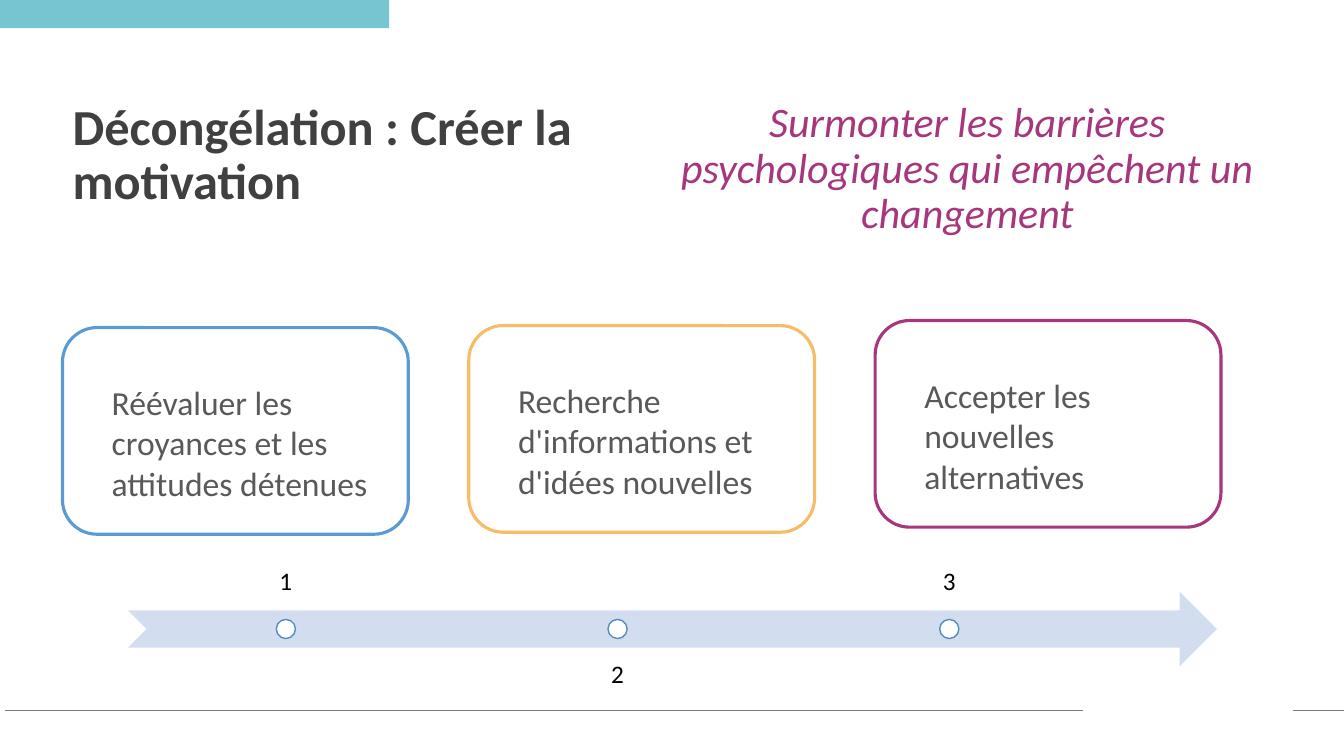
from dataclasses import dataclass

from lxml.etree import SubElement
from pptx import Presentation
from pptx.dml.color import RGBColor
from pptx.enum.shapes import MSO_CONNECTOR, MSO_SHAPE as Preset
from pptx.enum.text import MSO_ANCHOR as Anchor, MSO_AUTO_SIZE, PP_ALIGN as Align
from pptx.oxml.ns import qn
from pptx.util import Inches, Pt


@dataclass(frozen=True)
class Theme:
    font: str = "Calibri"
    title: str = "404040"
    body: str = "595959"
    number: str = "000000"
    white: str = "FFFFFF"
    banner: str = "76C6D2"
    rule: str = "797979"
    blue: str = "5B9BD5"
    amber: str = "F6BC67"
    plum: str = "A6377D"
    arrow: str = "D2DEEF"
    marker: str = "538DC1"
    title_size: int = 36
    goal_size: int = 30
    card_size: int = 24
    number_size: int = 18


THEME = Theme()


def add_box(slide, preset, box, fill, line=None, weight=1):
    shape = slide.shapes.add_shape(preset, *map(Inches, box))
    shape.shadow.inherit = False
    shape.fill.solid()
    shape.fill.fore_color.rgb = RGBColor.from_string(fill)
    if line:
        shape.line.color.rgb = RGBColor.from_string(line)
        shape.line.width = Pt(weight)
    else:
        shape.line.fill.background()


def write(frame, text, size, color, align=Align.LEFT, anchor=Anchor.TOP,
          spacing=1, bold=False, italic=False):
    frame.word_wrap = True
    frame.auto_size = MSO_AUTO_SIZE.NONE
    frame.vertical_anchor = anchor
    paragraph = frame.paragraphs[0]
    paragraph.alignment = align
    paragraph.line_spacing = spacing
    run = paragraph.add_run()
    run.text = text
    font = run.font
    font.name, font.size, font.bold, font.italic = THEME.font, Pt(size), bold, italic
    font.color.rgb = RGBColor.from_string(color)


def add_text(slide, box, text, size, color, inset=None, **style):
    frame = slide.shapes.add_textbox(*map(Inches, box)).text_frame
    if inset:
        frame.margin_left = frame.margin_right = Inches(inset)
        frame.margin_top = frame.margin_bottom = Inches(inset)
    write(frame, text, size, color, **style)


def draw_frame(slide, width):
    add_box(slide, Preset.RECTANGLE, (0, 0, 3.86, 0.28), THEME.banner)
    y = Inches(7.05)
    for start, end in ((0.05, 10.74), (12.82, width)):
        rule = slide.shapes.add_connector(
            MSO_CONNECTOR.STRAIGHT, Inches(start), y, Inches(end), y)
        rule.line.color.rgb = RGBColor.from_string(THEME.rule)
        rule.line.width = Pt(0.5)
        SubElement(rule.element.spPr, qn("a:effectLst"))


def draw_heading(slide, left, top):
    title = slide.shapes.title
    title.left, title.top = Inches(left), Inches(top)
    title.width, title.height = Inches(5.74), Inches(1.6)
    write(title.text_frame, "Décongélation : Créer la motivation",
          THEME.title_size, THEME.title, spacing=0.9, bold=True)
    add_text(slide, (left + 5.89, top, 6.17, 1.23),
             "Surmonter les barrières psychologiques qui empêchent un changement",
             THEME.goal_size, THEME.plum, align=Align.CENTER, spacing=0.9, italic=True)


def draw_card(slide, left, top, text, color):
    add_box(slide, Preset.ROUNDED_RECTANGLE, (left, top, 3.43, 2.05),
            THEME.white, color, 2.25)
    add_text(slide, (left + 0.39, top + 0.49, 2.8, 1.31), text,
             THEME.card_size, THEME.body)


def draw_timeline(slide, left, top, width, height, steps):
    add_box(slide, Preset.NOTCHED_RIGHT_ARROW, (left, top, width, height), THEME.arrow)
    label_width, pitch, dot = 3.13, 3.29, 0.19
    for step in range(steps):
        x = left + step * pitch
        above = step % 2 == 0
        add_text(slide, (x, top + (-0.56 if above else 0.55), label_width, height),
                 str(step + 1), THEME.number_size, THEME.number, inset=0.14,
                 align=Align.CENTER, spacing=0.9,
                 anchor=Anchor.BOTTOM if above else Anchor.TOP)
        add_box(slide, Preset.OVAL,
                (x + (label_width - dot) / 2, top + (height - dot) / 2, dot, dot),
                THEME.white, THEME.marker)


def main():
    deck = Presentation()
    width = 13.33
    deck.slide_width, deck.slide_height = Inches(width), Inches(7.5)
    slide = deck.slides.add_slide(deck.slide_layouts[5])
    draw_frame(slide, width)
    draw_heading(slide, 0.62, 0.96)
    cards = (
        (3.25, "Réévaluer les croyances et les attitudes détenues", THEME.blue),
        (3.23, "Recherche d'informations et d'idées nouvelles", THEME.amber),
        (3.18, "Accepter les nouvelles alternatives", THEME.plum),
    )
    for column, (top, text, color) in enumerate(cards):
        draw_card(slide, 0.62 + column * 4.03, top, text, color)
    draw_timeline(slide, 1.27, 5.87, 10.8, 0.74, len(cards))
    deck.save("out.pptx")


if __name__ == "__main__":
    main()
